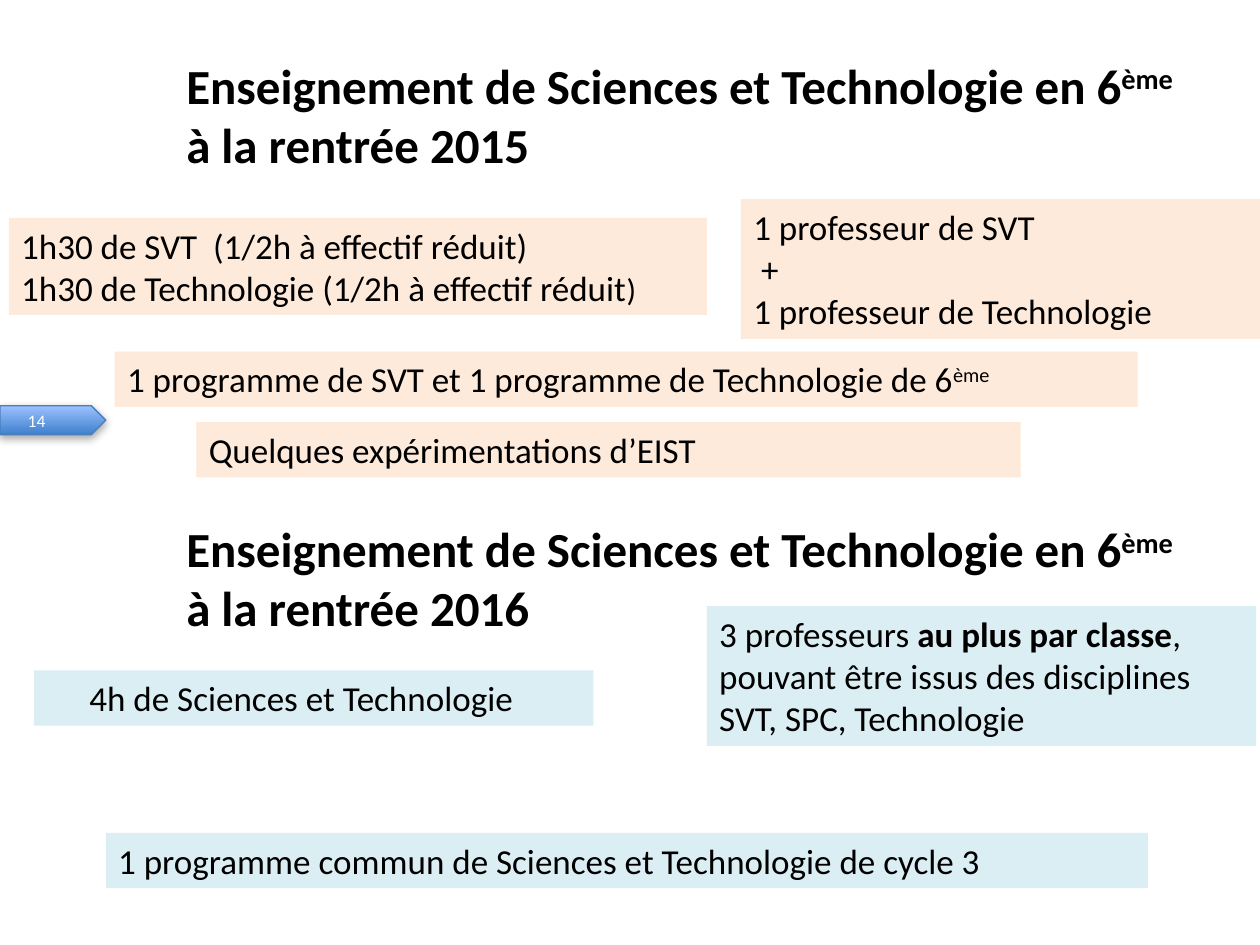
from lxml.etree import SubElement
from pptx import Presentation
from pptx.dml.color import RGBColor
from pptx.enum.shapes import MSO_SHAPE
from pptx.enum.text import MSO_ANCHOR, PP_ALIGN
from pptx.oxml.ns import qn
from pptx.util import Inches, Pt

BLACK = RGBColor(0x00, 0x00, 0x00)
WHITE = RGBColor(0xFF, 0xFF, 0xFF)
PEACH = RGBColor(0xFD, 0xEA, 0xDA)
AQUA = RGBColor(0xDB, 0xEE, 0xF4)
DEEP = RGBColor(0x3F, 0x80, 0xCD)
LIGHT = RGBColor(0x9B, 0xC1, 0xFF)
EDGE = RGBColor(0x4A, 0x7E, 0xBB)


class Deck:
    """Holds the text style and the current slide."""

    def __init__(self, slide, face="Calibri"):
        self.slide = slide
        self.face = face

    def label(self, frame, paras, size, color=BLACK, bold=False):
        frame.word_wrap = True
        for i, runs in enumerate(paras):
            para = frame.add_paragraph() if i else frame.paragraphs[0]
            para.alignment = PP_ALIGN.LEFT
            for text, mark in runs:
                run = para.add_run()
                run.text = text
                font = run.font
                font.name = self.face
                font.size = Pt(18 if mark == "small" else size)
                font.bold = bold or mark == "bold"
                font.color.rgb = color
                if mark == "super":
                    run._r.get_or_add_rPr().set("baseline", "30000")

    def title(self, top, year):
        box = self.slide.shapes.add_textbox(
            Inches(1.38), Inches(top), Inches(8.19), Inches(1.04))
        runs = [("Enseignement de Sciences et Technologie en 6", ""),
                ("ème", "super"), (f" à la rentrée {year}", "")]
        self.label(box.text_frame, [runs], 28, bold=True)

    def card(self, area, fill, *paras, inset=0.1):
        box = self.slide.shapes.add_shape(
            MSO_SHAPE.RECTANGLE, *map(Inches, area))
        box.shadow.inherit = False
        box.fill.solid()
        box.fill.fore_color.rgb = fill
        box.line.fill.background()
        frame = box.text_frame
        frame.vertical_anchor = MSO_ANCHOR.TOP
        frame.margin_left = Inches(inset)
        self.label(frame, paras, 20)

    def tag(self, area, text):
        tag = self.slide.shapes.add_shape(
            MSO_SHAPE.PENTAGON, *map(Inches, area))
        tag.fill.gradient()
        tag.fill.gradient_angle = 90
        for stop, color, place in zip(
                tag.fill.gradient_stops, (DEEP, LIGHT), (0, 1)):
            stop.color.rgb = color
            stop.position = place
        tag.line.color.rgb = EDGE
        tag.line.width = Pt(0.75)
        tag.shadow.inherit = False
        glow = SubElement(
            tag._element.spPr.find(qn("a:effectLst")), qn("a:outerShdw"),
            blurRad=str(Pt(5)), dist=str(Pt(1.8)), dir="5400000",
            rotWithShape="0")
        shade = SubElement(glow, qn("a:srgbClr"), val="000000")
        SubElement(shade, qn("a:alpha"), val="35000")
        frame = tag.text_frame
        frame.vertical_anchor = MSO_ANCHOR.MIDDLE
        frame.margin_left = Inches(0.22)
        self.label(frame, [[(text, "")]], 10, WHITE)


def main():
    show = Presentation()
    show.slide_width, show.slide_height = Inches(10), Inches(7.5)
    deck = Deck(show.slides.add_slide(show.slide_layouts[6]))
    deck.tag((0, 3.22, 0.84, 0.23), "14")

    deck.title(0.39, 2015)
    deck.card((0.07, 1.73, 5.54, 0.77), PEACH,
              [("1h30 de SVT  (1/2h à effectif réduit)", "")],
              [("1h30 de Technologie (1/2h à effectif réduit", ""),
               (")", "small")])
    deck.card((5.88, 1.58, 4.12, 1.11), PEACH,
              [("1 professeur de SVT", "")], [(" +", "")],
              [("1 professeur de Technologie", "")])
    deck.card((0.91, 2.79, 8.12, 0.44), PEACH,
              [("1 programme de SVT et 1 programme de Technologie de 6", ""),
               ("ème", "super")])
    deck.card((1.56, 3.35, 6.54, 0.44), PEACH,
              [("Quelques expérimentations d’EIST", "")])

    deck.title(4.07, 2016)
    deck.card((5.61, 4.81, 4.36, 1.11), AQUA,
              [("3 professeurs ", ""), ("au plus par classe", "bold"),
               (", pouvant être issus des disciplines SVT, SPC, Technologie",
                "")])
    deck.card((0.27, 5.32, 4.44, 0.44), AQUA,
              [("4h de Sciences et Technologie", "")], inset=0.44)
    deck.card((0.84, 6.61, 8.27, 0.44), AQUA,
              [("1 programme commun de Sciences et Technologie de cycle 3",
                "")])
    show.save("out.pptx")


if __name__ == "__main__":
    main()
